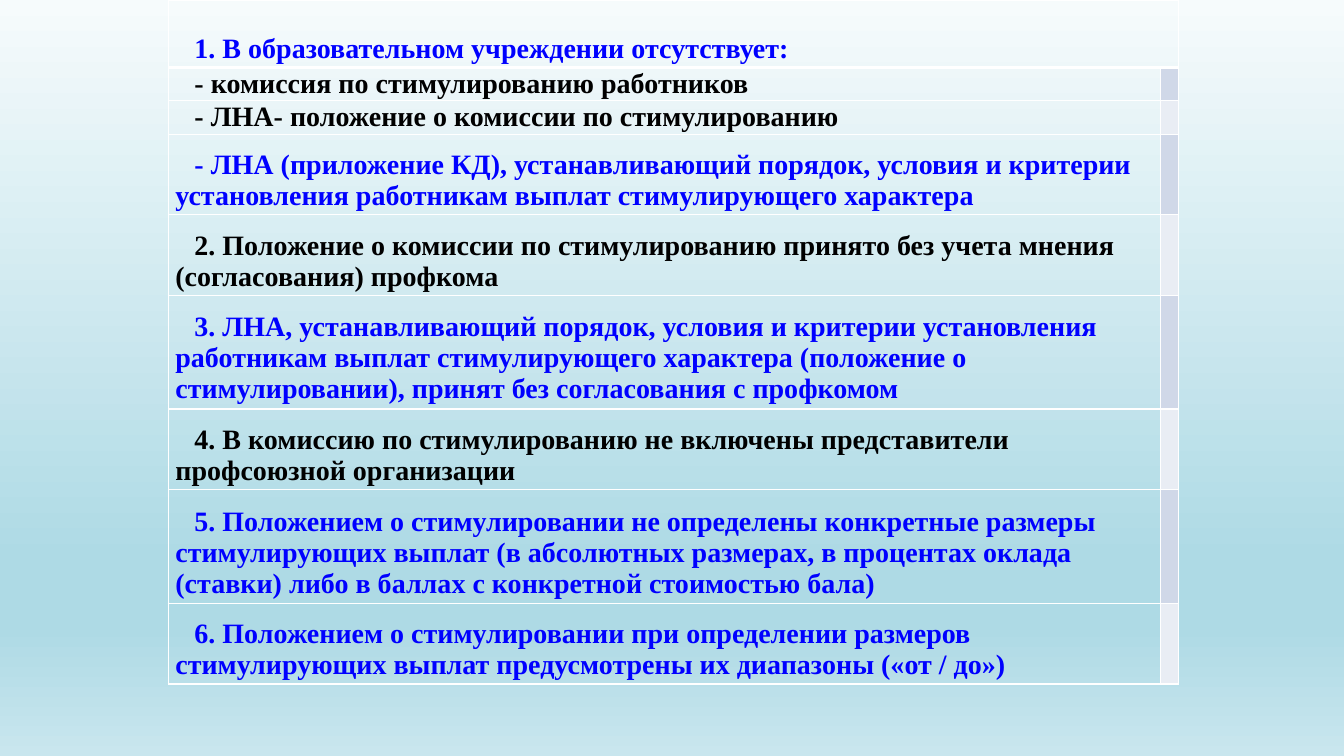
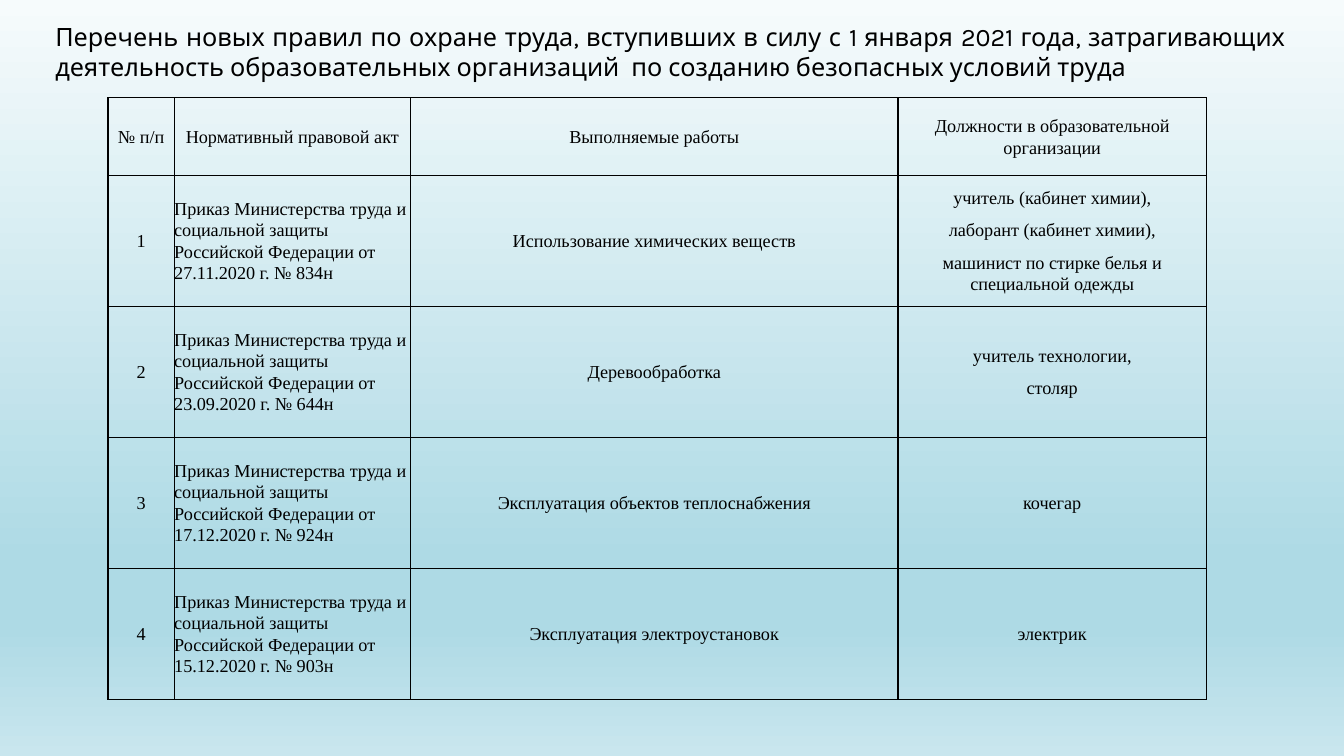
from lxml import etree
from pptx import Presentation
from pptx import util as u
from pptx.dml.color import RGBColor
from pptx.enum import text
from pptx.oxml import ns

BLACK = RGBColor(0x00, 0x00, 0x00)
WHITE = RGBColor(0xFF, 0xFF, 0xFF)
BLUE = RGBColor(0x00, 0x00, 0xFF)
BANDS = (RGBColor(0xE9, 0xED, 0xF4), RGBColor(0xD0, 0xD8, 0xE8))
SKY = ((0, RGBColor(0xF6, 0xFB, 0xFC)), (74, RGBColor(0xAE, 0xDA, 0xE5)),
       (83, RGBColor(0xAE, 0xDA, 0xE5)), (100, RGBColor(0xC9, 0xE6, 0xEE)))
BODY_FONT = "Times New Roman"
TITLE_FONT = "Karla"
TITLE_ONLY, BLANK = 5, 6


class Deck:
    """Holds the shared style and the current slide."""

    def __init__(self):
        self.prs = Presentation()
        self.prs.slide_width, self.prs.slide_height = u.Cm(33.87), u.Cm(19.05)
        self.s = None
        self.sky_background()

    def sky_background(self):
        master = self.prs.slide_master
        fill = master.background.fill
        fill.gradient()
        fill.gradient_angle = 270
        stops = next(master.element.iter(ns.qn("a:gsLst")))
        for gs in list(stops):
            stops.remove(gs)
        for pos, color in SKY:
            gs = etree.SubElement(stops, ns.qn("a:gs"), pos=str(pos * 1000))
            etree.SubElement(gs, ns.qn("a:srgbClr"), val=str(color))

    def slide(self, layout):
        self.s = self.prs.slides.add_slide(self.prs.slide_layouts[layout])

    def run(self, p, words, size, color=BLACK, font=BODY_FONT, bold=False):
        r = p.add_run()
        r.text = words
        r.font.name, r.font.size, r.font.bold = font, u.Pt(size), bold
        r.font.color.rgb = color

    def title(self, words):
        sp = self.s.shapes.title
        sp.left, sp.top, sp.width, sp.height = u.Cm(1.14), u.Cm(0.4), u.Cm(31.52), u.Cm(1.8)
        tf = sp.text_frame
        tf.word_wrap = True
        tf.auto_size = text.MSO_AUTO_SIZE.SHAPE_TO_FIT_TEXT
        tf.vertical_anchor = text.MSO_ANCHOR.TOP
        p = tf.paragraphs[0]
        p.alignment = text.PP_ALIGN.JUSTIFY
        self.run(p, words, 18, font=TITLE_FONT)

    def table(self, left, top, cols, rows):
        sp = self.s.shapes.add_table(len(rows), len(cols), u.Cm(left), u.Cm(top),
                                     u.Cm(sum(cols)), u.Cm(sum(rows)))
        tbl = sp.table
        tbl.first_row = tbl.horz_banding = False
        for col, width in zip(tbl.columns, cols):
            col.width = u.Cm(width)
        for row, height in zip(tbl.rows, rows):
            row.height = u.Cm(height)
        return tbl

    def cell(self, cell, line, fill=None, side=0, above=0, top=1, bottom=1):
        """Set borders, fill and margins; above is the gap over the text."""
        tc_pr = cell._tc.get_or_add_tcPr()
        for edge, width in (("L", 1), ("R", 1), ("T", top), ("B", bottom)):
            ln = etree.SubElement(tc_pr, ns.qn(f"a:ln{edge}"), w=str(u.Pt(width)))
            solid = etree.SubElement(ln, ns.qn("a:solidFill"))
            etree.SubElement(solid, ns.qn("a:srgbClr"), val=str(line))
        if fill is None:
            cell.fill.background()
        else:
            cell.fill.solid()
            cell.fill.fore_color.rgb = fill
        cell.margin_left = cell.margin_right = u.Cm(side)
        cell.margin_top, cell.margin_bottom = u.Cm(above), 0
        cell.vertical_anchor = text.MSO_ANCHOR.MIDDLE
        return cell.text_frame


# Violations: words, colour, row height, gap over the text
VIOLATIONS = (
    ("1. В образовательном учреждении отсутствует:", BLUE, 1.7, 0.78),
    ("- комиссия по стимулированию работников", BLACK, 0.84, 0),
    ("- ЛНА- положение о комиссии по стимулированию", BLACK, 0.84, 0),
    ("- ЛНА (приложение КД), устанавливающий порядок, условия и критерии "
     "установления работникам выплат стимулирующего характера", BLUE, 2.03, 0.31),
    ("2. Положение о комиссии по стимулированию принято без учета мнения "
     "(согласования) профкома", BLACK, 2.03, 0.31),
    ("3. ЛНА, устанавливающий порядок, условия и критерии установления "
     "работникам выплат стимулирующего характера (положение о "
     "стимулировании), принят без согласования с профкомом", BLUE, 2.87, 0.31),
    ("4. В комиссию по стимулированию не включены представители "
     "профсоюзной организации", BLACK, 2.03, 0.31),
    ("5. Положением о стимулировании не определены конкретные размеры "
     "стимулирующих выплат (в абсолютных размерах, в процентах оклада "
     "(ставки) либо в баллах с конкретной стоимостью бала)", BLUE, 2.87, 0.31),
    ("6. Положением о стимулировании при определении размеров "
     "стимулирующих выплат предусмотрены их диапазоны («от / до»)", BLUE, 2.03, 0.31),
)

# Safety rules: date and number of the order, works, positions
HEADERS = ("№ п/п", "Нормативный правовой акт", "Выполняемые работы",
           "Должности в образовательной организации")
RULES = (
    ("27.11.2020", "834н", "Использование химических веществ",
     ("учитель (кабинет химии),", "лаборант (кабинет химии),",
      "машинист по стирке белья и специальной одежды")),
    ("23.09.2020", "644н", "Деревообработка", ("учитель технологии,", "столяр")),
    ("17.12.2020", "924н", "Эксплуатация объектов теплоснабжения", ("кочегар",)),
    ("15.12.2020", "903н", "Эксплуатация электроустановок", ("электрик",)),
)


def violations_slide(deck):
    deck.slide(BLANK)
    tbl = deck.table(4.24, 0, (25, 0.4), [row[2] for row in VIOLATIONS])
    tbl.cell(0, 0).merge(tbl.cell(0, 1))
    for i, (words, color, _, above) in enumerate(VIOLATIONS):
        edges = {"top": 3 if i == 1 else 1, "bottom": 3 if i == 0 else 1}
        tf = deck.cell(tbl.cell(i, 0), WHITE, side=0.18, above=above, **edges)
        p = tf.paragraphs[0]
        p._p.get_or_add_pPr().set("indent", str(u.Cm(0.48)))
        deck.run(p, words, 20, color, bold=True)
        deck.cell(tbl.cell(i, 1), WHITE, BANDS[i % 2] if i else None, **edges)


def rules_slide(deck):
    deck.slide(TITLE_ONLY)
    deck.title("Перечень новых правил по охране труда, вступивших в силу с 1 января 2021 года, "
               "затрагивающих деятельность образовательных организаций  по созданию "
               "безопасных условий труда")
    rows = [[(header,) for header in HEADERS]]
    for n, (date, number, works, positions) in enumerate(RULES, 1):
        order = ("Приказ Министерства труда и социальной защиты Российской Федерации "
                 f"от {date} г. № {number}")
        rows.append([(str(n),), (order,), (works,), positions])

    tbl = deck.table(2.72, 2.46, (1.67, 5.95, 12.29, 7.77), [1.96] + [3.3] * len(RULES))
    for i, row in enumerate(rows):
        for j, lines in enumerate(row):
            tf = deck.cell(tbl.cell(i, j), BLACK)
            for k, words in enumerate(lines):
                p = tf.add_paragraph() if k else tf.paragraphs[0]
                is_order = i > 0 and j == 1
                p.alignment = text.PP_ALIGN.LEFT if is_order else text.PP_ALIGN.CENTER
                p.line_spacing, p.space_after = 1.07, u.Pt(8)
                deck.run(p, words, 13)


def main():
    deck = Deck()
    violations_slide(deck)
    rules_slide(deck)
    deck.prs.save("out.pptx")


if __name__ == "__main__":
    main()
